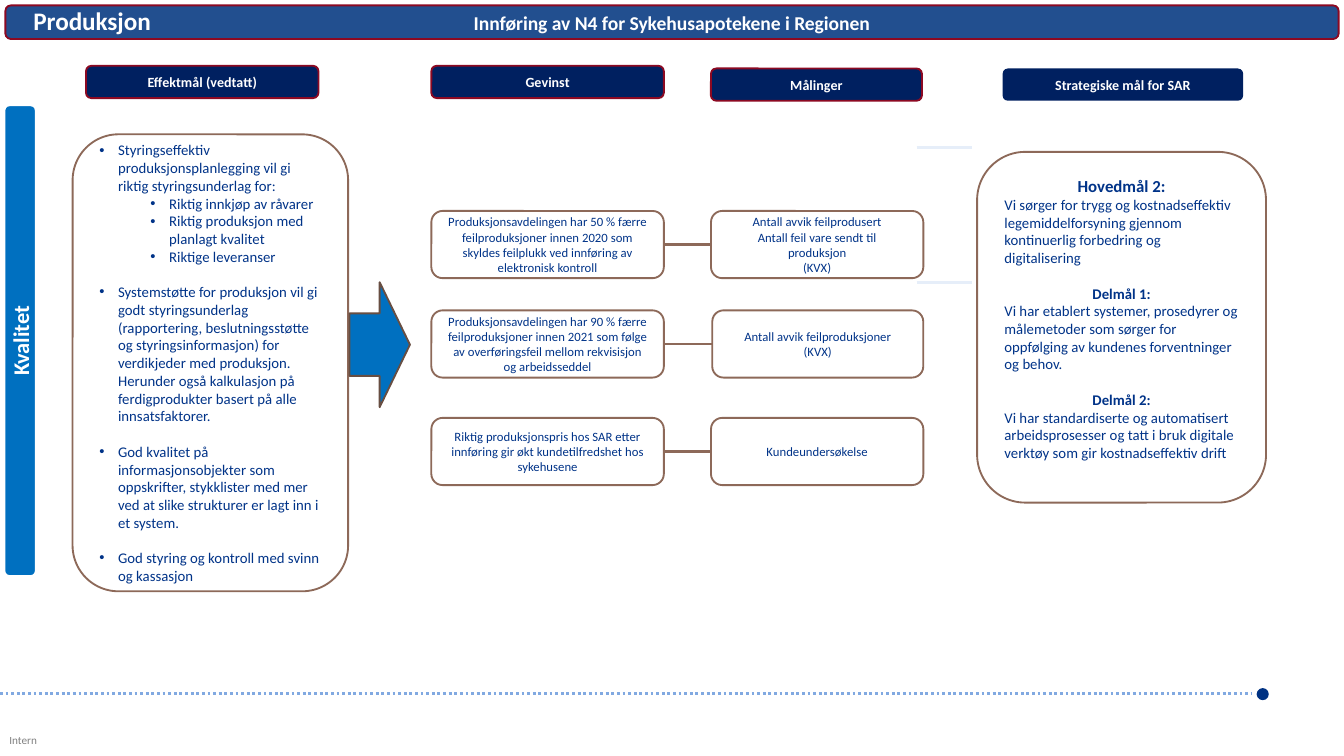
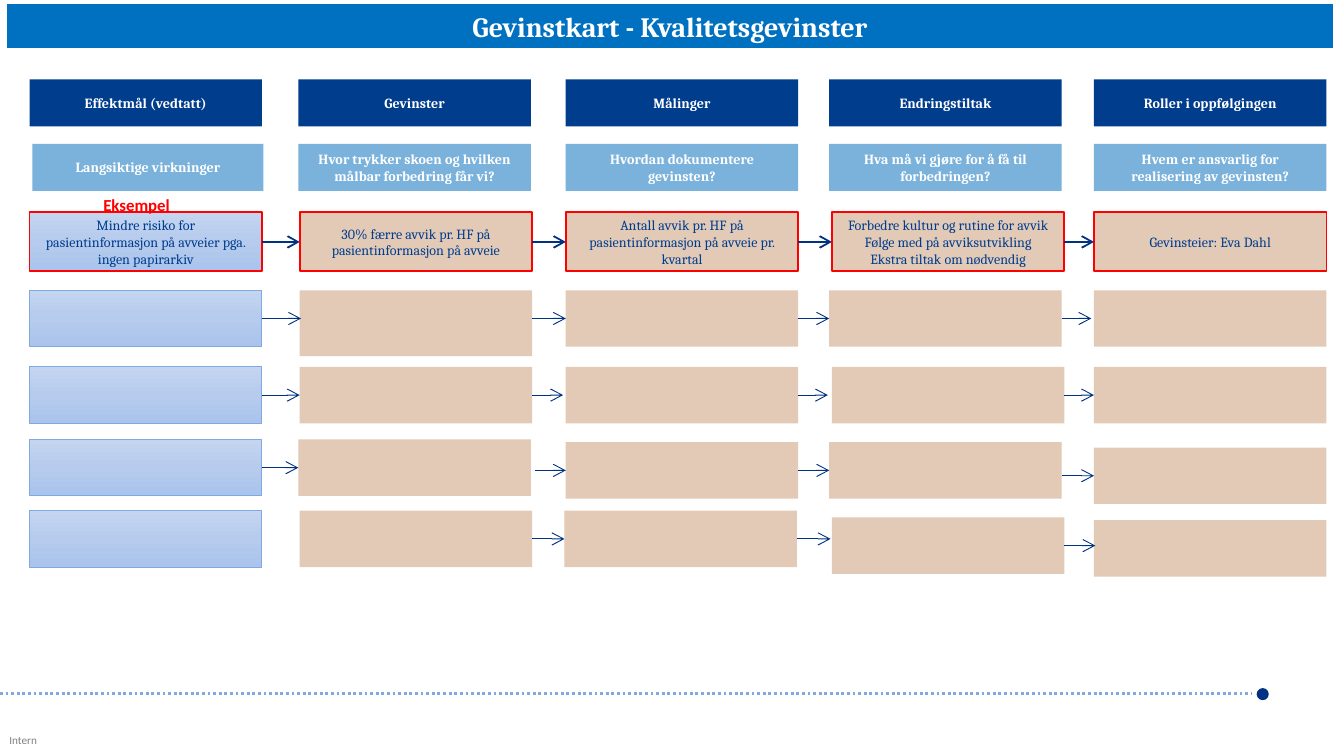
from copy import deepcopy
from dataclasses import dataclass
from math import hypot

from lxml.etree import SubElement
from pptx import Presentation
from pptx.dml.color import RGBColor as Rgb
from pptx.enum.dml import MSO_LINE_DASH_STYLE as Dash
from pptx.enum.shapes import MSO_CONNECTOR as Link, MSO_SHAPE as Form
from pptx.enum.text import MSO_ANCHOR as Anchor, PP_ALIGN as Align
from pptx.oxml.ns import qn
from pptx.util import Inches, Pt

COLUMNS = 100
SIDE_TOP, SIDE_LEFT, SIDE_BOTTOM, SIDE_RIGHT = range(4)


@dataclass(frozen=True)
class Theme:
    """Colours, fonts and type sizes of the deck."""
    sans: str = "Calibri"
    serif: str = "Cambria"
    white: str = "FFFFFF"
    black: str = "000000"
    red: str = "FF0000"
    wine: str = "8C0922"
    band: str = "224F8F"
    azure: str = "0070C0"
    midnight: str = "002060"
    ink: str = "003388"
    brown: str = "8D6959"
    umber: str = "684E42"
    mist: str = "E6EEF9"
    navy: str = "003283"
    royal: str = "003D8D"
    sky: str = "7AB2DC"
    periwinkle: str = "81A9E1"
    sand: tuple = ("D1A887", 0.6)
    haze: tuple = ("C4D5F1", "B6CBED", "AAC4ED")
    banner: float = 15
    heading: float = 13.5
    side: float = 12
    subject: float = 10.5
    lead: float = 9
    body: float = 7.9
    label: float = 7.5
    note: float = 6.8
    footer: float = 6
    blank_line: float = 9.5


T = Theme()


def fade(element, share):
    """Make every colour in the element partly transparent."""
    for colour in element.iter(qn("a:srgbClr")):
        SubElement(colour, qn("a:alpha"), val=str(round(share * 100000)))


def write(frame, lines, **shared):
    """Fill a text frame; each line is a string or a (string, format) pair."""
    for index, line in enumerate([lines] if isinstance(lines, str) else lines):
        words, own = (line, {}) if isinstance(line, str) else line
        look = {"font": T.sans, "size": T.label, "color": T.white, "bold": False,
                "align": Align.CENTER, "gap": 0, "indent": 0, "level": 0,
                "opacity": 1, **shared, **own}
        paragraph = frame.paragraphs[0] if index == 0 else frame.add_paragraph()
        paragraph.alignment = look["align"]
        paragraph.level = look["level"]
        if look["indent"]:
            props = paragraph._p.get_or_add_pPr()
            props.set("marL", str(Inches(look["indent"])))
            props.set("indent", str(Inches(-0.14)))
            SubElement(props, qn("a:buFont"), typeface="Arial")
            SubElement(props, qn("a:buChar"), char="•")
        if look["gap"]:
            paragraph.space_before = Pt(look["gap"])
        run = paragraph.add_run()
        run.text = words
        run.font.name, run.font.size = look["font"], Pt(look["size"])
        run.font.bold = look["bold"]
        run.font.color.rgb = Rgb.from_string(look["color"])
        if look["opacity"] < 1:
            fade(run._r, look["opacity"])


class Deck:
    """Draws on the current slide in square cells, 100 to the slide's width."""

    def __init__(self):
        self.show = Presentation()
        self.show.slide_width, self.show.slide_height = Inches(10), Inches(5.625)
        self.cell = self.show.slide_width / COLUMNS
        self.slide, self.cards = None, []

    def span(self, *cells):
        """Turn grid cells into lengths."""
        return [round(cell * self.cell) for cell in cells]

    def page(self):
        """Start a slide with the shared footer."""
        self.slide = self.show.slides.add_slide(self.show.slide_layouts[6])
        self.cards = []
        self.line(0, 51.6, 93.1, 51.6, T.periwinkle, dash=Dash.ROUND_DOT)
        self.card((93.5, 51.2, 0.9, 0.9), T.navy, form=Form.OVAL)
        self.words((0.7, 54.6, 2.3, 1), "Intern", inset=0, size=T.footer,
                   color=T.black, opacity=0.5)

    def card(self, at, fill, lines=(), edge=None, weight=1, form=Form.RECTANGLE,
             anchor=Anchor.MIDDLE, turn=None, foot=0.05, **look):
        """Add a filled shape with text; fill is plain, (colour, opacity) or a gradient."""
        shape = self.slide.shapes.add_shape(form, *self.span(*at))
        shape.shadow.inherit = False
        self.paint(shape, fill)
        if edge:
            shape.line.color.rgb = Rgb.from_string(edge)
            shape.line.width = Pt(weight)
        else:
            shape.line.fill.background()
        frame = shape.text_frame
        frame.word_wrap, frame.vertical_anchor = True, anchor
        frame.margin_bottom = Inches(foot)
        if turn:
            frame._txBody.bodyPr.set("vert", turn)
        write(frame, lines, **look)
        self.cards.append((at, shape))

    def paint(self, shape, fill):
        """Give a shape its fill."""
        if fill == T.haze:
            shape.fill.gradient()
            shape.fill.gradient_angle = 270
            stops = shape.fill.gradient_stops
            stops[0].color.rgb = Rgb.from_string(fill[0])
            stops[1].color.rgb = Rgb.from_string(fill[2])
            ramp = next(shape._element.spPr.iter(qn("a:gsLst")))
            middle = deepcopy(ramp[0])
            middle.set("pos", "50000")
            middle[0].set("val", fill[1])
            ramp.insert(1, middle)
            return
        colour, opacity = (fill, 1) if isinstance(fill, str) else fill
        shape.fill.solid()
        shape.fill.fore_color.rgb = Rgb.from_string(colour)
        if opacity < 1:
            fade(shape._element.spPr, opacity)

    def words(self, at, lines, inset=None, wrap=True, **look):
        """Add free text."""
        frame = self.slide.shapes.add_textbox(*self.span(*at)).text_frame
        frame.word_wrap = wrap
        if inset is not None:
            frame.margin_left = frame.margin_right = inset
            frame.margin_top = frame.margin_bottom = inset
        write(frame, lines, **{"align": Align.LEFT, **look})

    def line(self, x1, y1, x2, y2, color, weight=1.5, dash=None, arrow=False):
        """Add a straight line, joined to any card whose side it meets."""
        link = self.slide.shapes.add_connector(Link.STRAIGHT, *self.span(x1, y1, x2, y2))
        link.line.color.rgb = Rgb.from_string(color)
        link.line.width = Pt(weight)
        if dash:
            link.line.dash_style = dash
        if arrow:
            SubElement(link.line._get_or_add_ln(), qn("a:tailEnd"), type="arrow")
        SubElement(link._element.spPr, qn("a:effectLst"))
        for (left, top, width, height), shape in self.cards:
            middle = top + height / 2
            if hypot(x1 - left - width, y1 - middle) < 0.15:
                link.begin_connect(shape, SIDE_RIGHT)
            if hypot(x2 - left, y2 - middle) < 0.15:
                link.end_connect(shape, SIDE_LEFT)


def production(deck):
    """Benefit map for production."""
    deck.page()
    soft = {"form": Form.FLOWCHART_ALTERNATE_PROCESS}
    outlined = {**soft, "edge": T.brown, "color": T.ink}
    deck.card((0.4, 0.4, 99.2, 2.5), T.band,
              "Innføring av N4 for Sykehusapotekene i Regionen",
              edge=T.wine, size=T.subject, bold=True, **soft)
    deck.words((1.5, -0.1, 24.9, 3.3), "Produksjon", size=T.heading, bold=True)
    deck.card((0.3, 7.8, 2.4, 35.1), T.azure, "Kvalitet", edge=T.white, weight=1.5,
              turn="vert270", size=T.side, bold=True, **soft)
    for left, top, width, heading, edge in (
            (6.4, 4.9, 17.3, "Effektmål (vedtatt)", T.wine),
            (32.1, 4.9, 17.3, "Gevinst", T.wine),
            (52.9, 5.1, 15.7, "Målinger", T.wine),
            (74.6, 5.1, 17.9, "Strategiske mål for SAR", None)):
        deck.card((left, top, width, 2.4), T.midnight, heading, edge=edge, bold=True, **soft)
    for level in (11, 21):
        deck.line(68.2, level, 72.3, level, T.mist)

    for top, measure_left, benefit, measures in (
            (15.7, 52.9, "Produksjonsavdelingen har 50 % færre feilproduksjoner innen 2020 "
             "som skyldes feilplukk ved innføring av elektronisk kontroll",
             ["Antall avvik feilprodusert", "Antall feil vare sendt til produksjon", "(KVX)"]),
            (23.1, 53, "Produksjonsavdelingen har 90 % færre feilproduksjoner innen 2021 "
             "som følge av overføringsfeil mellom rekvisisjon og arbeidsseddel",
             ["Antall avvik feilproduksjoner", "(KVX)"]),
            (31.1, 52.9, "Riktig produksjonspris hos SAR etter innføring gir økt "
             "kundetilfredshet hos sykehusene", "Kundeundersøkelse")):
        deck.card((32.1, top, 17.3, 5), T.white, benefit, size=T.note, **outlined)
        deck.card((measure_left, top, 68.7 - measure_left, 5), T.white, measures,
                  size=T.note, **outlined)
        deck.line(49.4, top + 2.5, measure_left, top + 2.5, T.brown)

    sub = {"indent": 0.52, "level": 1}
    apart = {"gap": T.blank_line}
    deck.card((5.4, 10, 20.5, 34), T.white, [
        "Styringseffektiv produksjonsplanlegging vil gi riktig styringsunderlag for:",
        ("Riktig innkjøp av råvarer", sub),
        ("Riktig produksjon med planlagt kvalitet", sub),
        ("Riktige leveranser", sub),
        ("Systemstøtte for produksjon vil gi godt styringsunderlag (rapportering, "
         "beslutningsstøtte og styringsinformasjon) for verdikjeder med produksjon. Herunder "
         "også kalkulasjon på ferdigprodukter basert på alle innsatsfaktorer.", apart),
        ("God kvalitet på informasjonsobjekter som oppskrifter, stykklister med mer ved at "
         "slike strukturer er lagt inn i et system.", apart),
        ("God styring og kontroll med svinn og kassasjon", apart),
    ], size=T.body, align=Align.LEFT, indent=0.14, **outlined)
    title = {"bold": True, "align": Align.CENTER}
    deck.card((72.7, 11.3, 21.5, 26.1), T.white, [
        ("Hovedmål 2:", {**title, "size": T.lead}),
        "Vi sørger for trygg og kostnadseffektiv legemiddelforsyning gjennom kontinuerlig "
        "forbedring og digitalisering",
        ("Delmål 1:", {**title, **apart}),
        "Vi har etablert systemer, prosedyrer og målemetoder som sørger for oppfølging av "
        "kundenes forventninger og behov.",
        ("Delmål 2:", {**title, **apart}),
        "Vi har standardiserte og automatisert arbeidsprosesser og tatt i bruk digitale "
        "verktøy som gir kostnadseffektiv drift",
    ], size=T.body, align=Align.LEFT, foot=0.18, **outlined)
    deck.card((26, 21, 4.5, 9.3), T.azure, edge=T.umber, form=Form.RIGHT_ARROW)


def quality(deck):
    """Benefit map for quality, with one worked example row."""
    deck.page()
    wide = 17.3
    deck.card((0.4, 0.2, 98.9, 3.5), T.azure, "Gevinstkart - Kvalitetsgevinster",
              edge=T.white, weight=1.5, anchor=Anchor.TOP, font=T.serif,
              size=T.banner, bold=True)
    for left, heading, question in (
            (2.2, "Effektmål (vedtatt)", "Langsiktige virkninger"),
            (22.2, "Gevinster", "Hvor trykker skoen og hvilken målbar forbedring får vi?"),
            (42.1, "Målinger", "Hvordan dokumentere gevinsten?"),
            (61.7, "Endringstiltak", "Hva må vi gjøre for å få til forbedringen?"),
            (81.4, "Roller i oppfølgingen", "Hvem er ansvarlig for realisering av gevinsten?")):
        shift = 0.2 if left == 2.2 else 0
        deck.card((left, 5.9, wide, 3.5), T.royal, heading, font=T.serif, bold=True)
        deck.card((left + shift, 10.7, wide - shift / 2, 3.5), T.sky, question,
                  font=T.serif, bold=True)

    for left, example in (
            (2.2, "Mindre risiko for pasientinformasjon på avveier pga. ingen papirarkiv"),
            (22.3, "30% færre avvik pr. HF på pasientinformasjon på avveie"),
            (42.1, "Antall avvik pr. HF på pasientinformasjon på avveie pr. kvartal"),
            (61.9, ["Forbedre kultur og rutine for avvik",
                    "Følge med på avviksutvikling", "Ekstra tiltak om nødvendig"]),
            (81.4, "Gevinsteier: Eva Dahl")):
        deck.card((left, 15.8, wide, 4.4), T.haze if left == 2.2 else T.sand, example,
                  edge=T.red, font=T.serif, color=T.royal)
    for start, end in ((19.5, 22.3), (39.6, 42.1), (59.4, 61.9), (79.2, 81.4)):
        deck.line(start, 18, end, 18, T.navy, weight=1, arrow=True)

    for lefts, tops in (
            ((2.2, 22.3, 42.1, 61.7, 81.4), (21.6,) * 5),
            ((2.2, 22.3, 42.1, 61.9, 81.4), (27.3,) * 5),
            ((2.2, 22.2, 42.1, 61.7, 81.4), (32.7, 32.7, 32.9, 32.9, 33.3)),
            ((2.2, 22.3, 42, 61.9, 81.4), (38, 38, 38, 38.5, 38.7))):
        for left, top in zip(lefts, tops):
            goal = left == 2.2
            tall = (left, top) == (22.3, 21.6)
            deck.card((left, top, wide, 4.9 if tall else 4.2), T.haze if goal else T.sand,
                      edge=T.periwinkle if goal else None, weight=0.5)
    for steps in (
            ((19.6, 22.4, 23.7), (39.6, 42, 23.7), (59.4, 61.6, 23.7), (79, 81.2, 23.7)),
            ((19.6, 22.4, 29.4), (39.5, 41.9, 29.4), (59.3, 61.6, 29.4), (79.2, 81.4, 29.4)),
            ((19.5, 22.2, 34.8), (39.8, 42.1, 35), (59.3, 61.7, 35), (79, 81.4, 35.4)),
            ((39.5, 41.9, 40.1), (59.4, 61.8, 40.1), (79.1, 81.5, 40.6))):
        for start, end, level in steps:
            deck.line(start, level, end, level, T.navy, weight=0.5, arrow=True)
    deck.words((6.7, 14, 7.1, 2.5), "Eksempel", wrap=False, size=T.lead,
               color=T.red, bold=True)


def main():
    """Build and save the deck."""
    deck = Deck()
    production(deck)
    quality(deck)
    deck.show.save("out.pptx")


if __name__ == "__main__":
    main()
